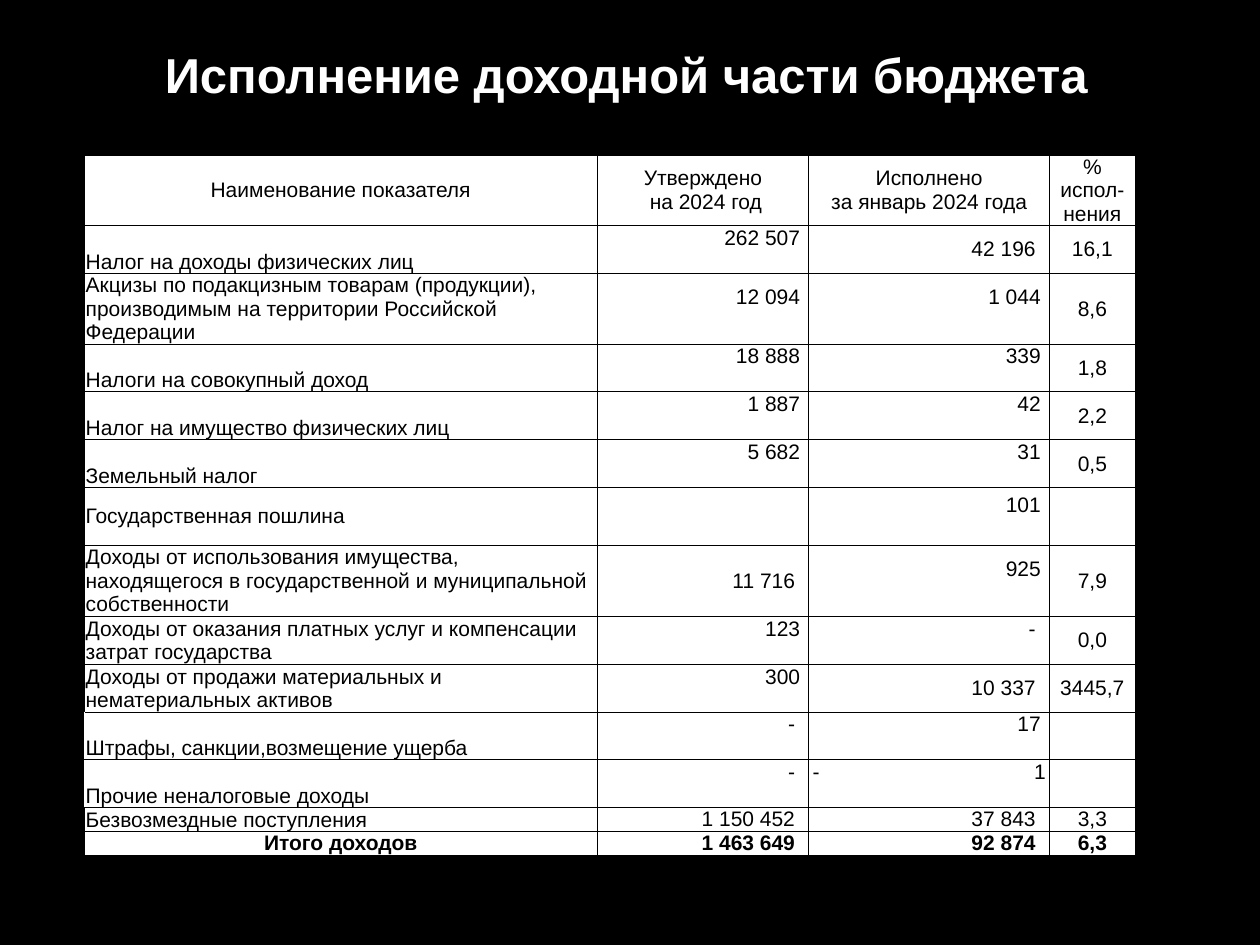
from lxml.etree import SubElement
from pptx import Presentation
from pptx.dml.color import RGBColor
from pptx.enum.text import MSO_ANCHOR, PP_ALIGN
from pptx.oxml.ns import qn
from pptx.util import Inches, Pt

BLACK = RGBColor(0x00, 0x00, 0x00)
WHITE = RGBColor(0xFF, 0xFF, 0xFF)

COLUMNS = [4.07, 1.68, 1.91, 0.68]
LINE_HEIGHTS = {1: 0.19, 2: 0.38, 3: 0.56}
ROW_LINES = [3, 2, 3, 2, 2, 2, 2, 3, 2, 2, 2, 2, 1, 1]
CENTERED_FIGURES = {"42 196", "11 716", "10 337", "1 150 452", "37 843",
                    "1 463 649", "92 874"}
OPEN_LEFT = {"Штрафы, санкции,возмещение ущерба", "Прочие неналоговые доходы"}
HEADINGS = ("Наименование показателя", "Утверждено\n на 2024 год",
            "Исполнено\nза январь 2024 года", "% испол-нения")
INCOME = [
    ("Налог на доходы физических лиц", "262 507", "42 196", "16,1"),
    ("Акцизы по подакцизным товарам (продукции), производимым на территории "
     "Российской Федерации", "12 094", "1 044", "8,6"),
    ("Налоги на совокупный доход", "18 888", "339", "1,8"),
    ("Налог на имущество физических лиц", "1 887", "42", "2,2"),
    ("Земельный налог", "5 682", "31", "0,5"),
    ("Государственная пошлина", "", "101", ""),
    ("Доходы от использования имущества, находящегося в государственной и "
     "муниципальной собственности", "11 716", "925", "7,9"),
    ("Доходы от оказания платных услуг и компенсации затрат государства",
     "123", "-", "0,0"),
    ("Доходы от продажи материальных и нематериальных активов",
     "300", "10 337", "3445,7"),
    ("Штрафы, санкции,возмещение ущерба", "-", "17", ""),
    ("Прочие неналоговые доходы", "-", "-\t1", ""),
    ("Безвозмездные поступления", "1 150 452", "37 843", "3,3"),
]
TOTAL = ("Итого доходов", "1 463 649", "92 874", "6,3")


def write_text(frame, text, size=12, color=BLACK, bold=False,
               align=PP_ALIGN.LEFT, tab=None):
    for index, line in enumerate(text.split("\n")):
        paragraph = frame.add_paragraph() if index else frame.paragraphs[0]
        paragraph.alignment = align
        if tab:
            stops = SubElement(paragraph._p.get_or_add_pPr(), qn("a:tabLst"))
            SubElement(stops, qn("a:tab"), pos=str(Inches(tab)), algn="r")
        run = paragraph.add_run()
        run.text = line
        run.font.name = "Arial"
        run.font.size = Pt(size)
        run.font.bold = bold
        run.font.color.rgb = color


class BudgetSlide:
    def __init__(self, presentation):
        self.slide = presentation.slides.add_slide(presentation.slide_layouts[5])
        self.slide.background.fill.solid()
        self.slide.background.fill.fore_color.rgb = BLACK

    def title(self, text):
        heading = self.slide.shapes.title
        heading.left, heading.top = Inches(0.47), Inches(0.23)
        heading.width, heading.height = Inches(9), Inches(0.72)
        heading.text_frame.vertical_anchor = MSO_ANCHOR.MIDDLE
        write_text(heading.text_frame, text, size=28, color=WHITE, bold=True,
                   align=PP_ALIGN.CENTER)

    def border(self, cell, sides):
        properties = cell._tc.get_or_add_tcPr()
        for side in sides:
            line = SubElement(properties, qn(f"a:ln{side}"), w=str(Pt(0.5)))
            fill = SubElement(line, qn("a:solidFill"))
            SubElement(fill, qn("a:srgbClr"), val=str(BLACK))

    def cell(self, cell, text, anchor=MSO_ANCHOR.MIDDLE, left=0.01, right=0.01,
             bottom=0, sides="LRTB", **text_format):
        self.border(cell, sides)
        cell.fill.solid()
        cell.fill.fore_color.rgb = WHITE
        cell.vertical_anchor = anchor
        cell.margin_left, cell.margin_right = Inches(left), Inches(right)
        cell.margin_top, cell.margin_bottom = Inches(0), Inches(bottom)
        write_text(cell.text_frame, text, **text_format)

    def label(self, cell, text):
        middle = text == "Государственная пошлина"
        self.cell(cell, text,
                  anchor=MSO_ANCHOR.MIDDLE if middle else MSO_ANCHOR.BOTTOM,
                  sides="RTB" if text in OPEN_LEFT else "LRTB")

    def figure(self, cell, text, bold=False):
        if "\t" in text:
            self.cell(cell, text, left=0.03, bottom=0.18, tab=1.85)
            return
        centered = text in CENTERED_FIGURES
        self.cell(cell, text, right=0.11 if centered or text == "-" else 0.07,
                  bottom=0 if centered else 0.18, bold=bold,
                  align=PP_ALIGN.RIGHT)

    def table(self, headings, income, total):
        heights = [LINE_HEIGHTS[lines] for lines in ROW_LINES]
        table = self.slide.shapes.add_table(
            len(heights), len(COLUMNS), Inches(0.67), Inches(1.23),
            Inches(sum(COLUMNS)), Inches(sum(heights))).table
        table.first_row = table.horz_banding = False
        for column, width in zip(table.columns, COLUMNS):
            column.width = Inches(width)
        for row, height in zip(table.rows, heights):
            row.height = Inches(height)
        for column, heading in enumerate(headings):
            self.cell(table.cell(0, column), heading, align=PP_ALIGN.CENTER)
        for row, (source, *amounts, percent) in enumerate([*income, total], 1):
            bold = row > len(income)
            if bold:
                self.cell(table.cell(row, 0), source, bold=True,
                          align=PP_ALIGN.CENTER)
            else:
                self.label(table.cell(row, 0), source)
            for column, amount in enumerate(amounts, 1):
                self.figure(table.cell(row, column), amount, bold)
            self.cell(table.cell(row, 3), percent, bold=bold,
                      align=PP_ALIGN.CENTER)


def main():
    presentation = Presentation()
    presentation.slide_width, presentation.slide_height = Inches(10), Inches(7.5)
    budget = BudgetSlide(presentation)
    budget.title("Исполнение доходной части бюджета")
    budget.table(HEADINGS, INCOME, TOTAL)
    presentation.save("out.pptx")


if __name__ == "__main__":
    main()
